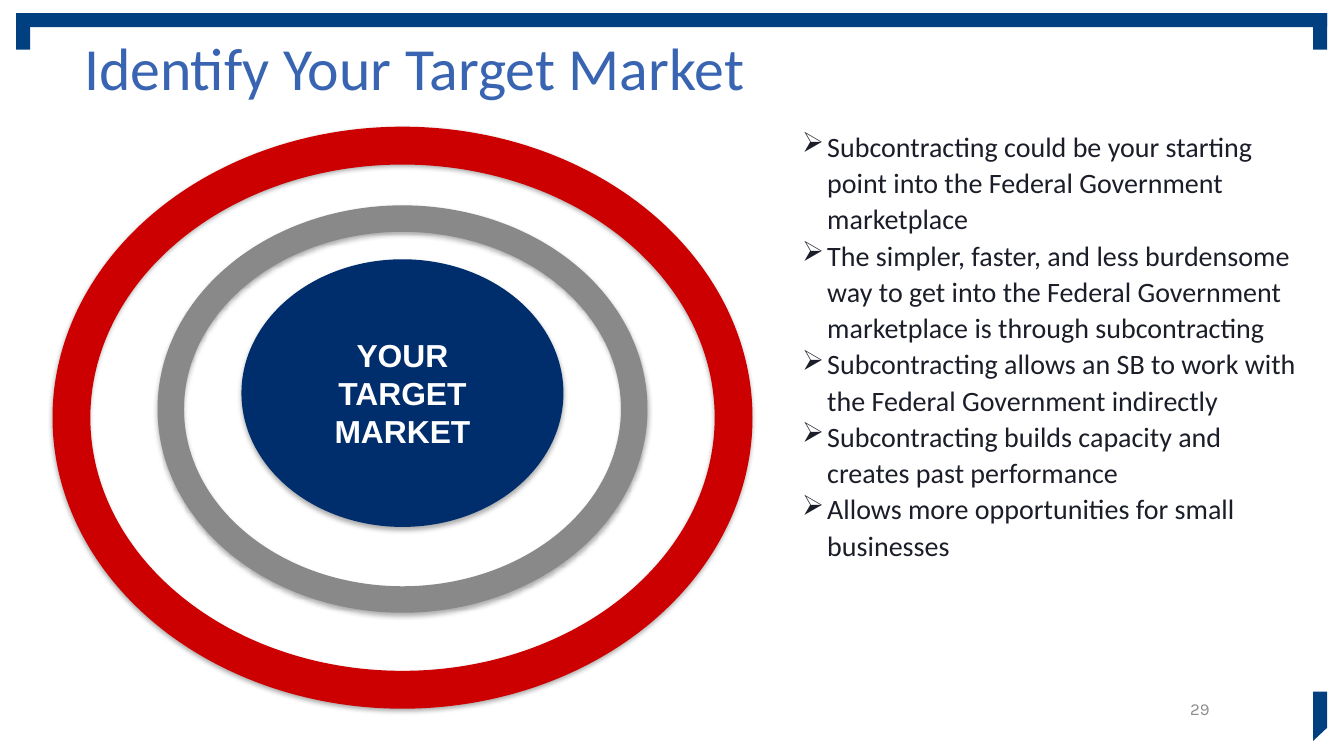
from dataclasses import dataclass

from lxml import etree
from pptx import Presentation
from pptx import util as u
from pptx.dml.color import RGBColor
from pptx.enum import shapes, text
from pptx.oxml import ns


@dataclass(frozen=True)
class Theme:
    frame: str = "003F80"
    title: str = "3864B2"
    body: str = "1B1E29"
    page_number: str = "8D8D8E"
    outer_ring: str = "CC0000"
    inner_ring: str = "898989"
    bullseye: str = "002E6D"
    white: str = "FFFFFF"
    title_size: float = 42.7
    body_size: float = 20
    target_size: float = 22.7
    page_number_size: float = 12


@dataclass(frozen=True)
class Box:
    left: float
    top: float
    width: float
    height: float

    def lengths(self) -> list:
        return [u.Pt(value) for value in (self.left, self.top, self.width, self.height)]


@dataclass(frozen=True)
class TargetLayer:
    kind: shapes.MSO_SHAPE
    top: float
    width: float
    height: float
    color: str


@dataclass(frozen=True)
class TextStyle:
    font: str
    size: float
    color: str
    bold: bool = False
    alignment: text.PP_ALIGN = text.PP_ALIGN.LEFT
    anchor: text.MSO_ANCHOR = text.MSO_ANCHOR.MIDDLE
    line_spacing: float = 1.0


THEME = Theme()
BAR = 10
FRAME_LEFT, FRAME_RIGHT, FRAME_TOP = 11.5, 948, 9.4
TARGET_CENTER = 287.5
RING_THICKNESS = 0.065

FRAME_BARS = [
    Box(FRAME_LEFT, FRAME_TOP, FRAME_RIGHT - FRAME_LEFT, BAR),
    Box(FRAME_LEFT, FRAME_TOP, BAR, 26),
    Box(FRAME_RIGHT - BAR, FRAME_TOP, BAR, 26),
]
TARGET_LAYERS = [
    TargetLayer(shapes.MSO_SHAPE.DONUT, 90.5, 500, 415.7, THEME.outer_ring),
    TargetLayer(shapes.MSO_SHAPE.DONUT, 146.7, 350, 291, THEME.inner_ring),
    TargetLayer(shapes.MSO_SHAPE.FLOWCHART_CONNECTOR, 185.2, 230, 191.2, THEME.bullseye),
]
BENEFITS = [
    "Subcontracting could be your starting point into the Federal Government marketplace",
    "The simpler, faster, and less burdensome way to get into the Federal Government "
    "marketplace is through subcontracting",
    "Subcontracting allows an SB to work with the Federal Government indirectly",
    "Subcontracting builds capacity and creates past performance",
    "Allows more opportunities for small businesses",
]


def paint(shape, color: str) -> None:
    shape.shadow.inherit = False
    shape.fill.solid()
    shape.fill.fore_color.rgb = RGBColor.from_string(color)
    shape.line.fill.background()


def add_soft_shadow(shape) -> None:
    effects = shape.fill._xPr.find(ns.qn("a:effectLst"))
    shadow = etree.SubElement(
        effects, ns.qn("a:outerShdw"), blurRad=str(u.Pt(3.5)), dist=str(u.Pt(2.2)),
        dir="5400000", algn="ctr", rotWithShape="0",
    )
    color = etree.SubElement(shadow, ns.qn("a:srgbClr"), val="000000")
    etree.SubElement(color, ns.qn("a:alpha"), val="32000")


def add_bullet(paragraph) -> None:
    """Hang an arrowhead bullet; Wingdings draws its arrowhead at the letter Ø."""
    properties = paragraph._p.get_or_add_pPr()
    properties.set("marL", str(u.Pt(18)))
    properties.set("indent", str(u.Pt(-21)))
    color = etree.SubElement(properties, ns.qn("a:buClr"))
    etree.SubElement(color, ns.qn("a:srgbClr"), val=THEME.body)
    etree.SubElement(properties, ns.qn("a:buFont"), typeface="Wingdings",
                     pitchFamily="2", charset="2")
    etree.SubElement(properties, ns.qn("a:buChar"), char="Ø")


def write(shape, lines: list[str], style: TextStyle, inset_x: float = 0,
          inset_y: float = 0, bulleted: bool = False) -> None:
    frame = shape.text_frame
    frame.word_wrap = True
    frame.vertical_anchor = style.anchor
    frame.margin_left = frame.margin_right = u.Pt(inset_x)
    frame.margin_top = frame.margin_bottom = u.Pt(inset_y)
    frame.text = "\n".join(lines)
    for paragraph in frame.paragraphs:
        paragraph.alignment = style.alignment
        paragraph.line_spacing = style.line_spacing
        if bulleted:
            add_bullet(paragraph)
        for run in paragraph.runs:
            run.font.name = style.font
            run.font.size = u.Pt(style.size)
            run.font.bold = style.bold
            run.font.color.rgb = RGBColor.from_string(style.color)


def draw_frame(slide) -> None:
    for bar in FRAME_BARS:
        paint(slide.shapes.add_shape(shapes.MSO_SHAPE.RECTANGLE, *bar.lengths()), THEME.frame)
    left, top = FRAME_RIGHT - BAR, 494
    corner = slide.shapes.build_freeform(u.Pt(left), u.Pt(top))
    points = [(FRAME_RIGHT, top), (FRAME_RIGHT, 519.8), (left, 529.2)]
    corner.add_line_segments([(u.Pt(x), u.Pt(y)) for x, y in points], close=True)
    paint(corner.convert_to_shape(), THEME.frame)


def draw_target(slide) -> None:
    for layer in TARGET_LAYERS:
        box = Box(TARGET_CENTER - layer.width / 2, layer.top, layer.width, layer.height)
        shape = slide.shapes.add_shape(layer.kind, *box.lengths())
        paint(shape, layer.color)
        add_soft_shadow(shape)
        if layer.kind == shapes.MSO_SHAPE.DONUT:
            shape.adjustments[0] = RING_THICKNESS
        else:
            style = TextStyle("Arial", THEME.target_size, THEME.white, bold=True,
                              alignment=text.PP_ALIGN.CENTER)
            write(shape, ["YOUR TARGET MARKET"], style, inset_x=9.6, inset_y=4.8)


def draw_texts(slide) -> None:
    title = slide.shapes.add_textbox(*Box(60, 21.5, 816, 52).lengths())
    write(title, ["Identify Your Target Market"],
          TextStyle("Calibri", THEME.title_size, THEME.title))
    page_number = slide.shapes.add_textbox(*Box(672, 489.6, 192, 33.6).lengths())
    write(page_number, ["29"],
          TextStyle("Karla", THEME.page_number_size, THEME.page_number,
                    alignment=text.PP_ALIGN.RIGHT))
    benefits = slide.shapes.add_textbox(*Box(563.3, 80.8, 377.3, 371.5).lengths())
    write(benefits, BENEFITS,
          TextStyle("Calibri", THEME.body_size, THEME.body,
                    anchor=text.MSO_ANCHOR.TOP, line_spacing=1.08),
          inset_x=9.6, inset_y=9.6, bulleted=True)


def main() -> None:
    presentation = Presentation()
    presentation.slide_width = u.Pt(960)
    presentation.slide_height = u.Pt(540)
    slide = presentation.slides.add_slide(presentation.slide_layouts[6])
    draw_frame(slide)
    draw_texts(slide)
    draw_target(slide)
    presentation.save("out.pptx")


if __name__ == "__main__":
    main()
